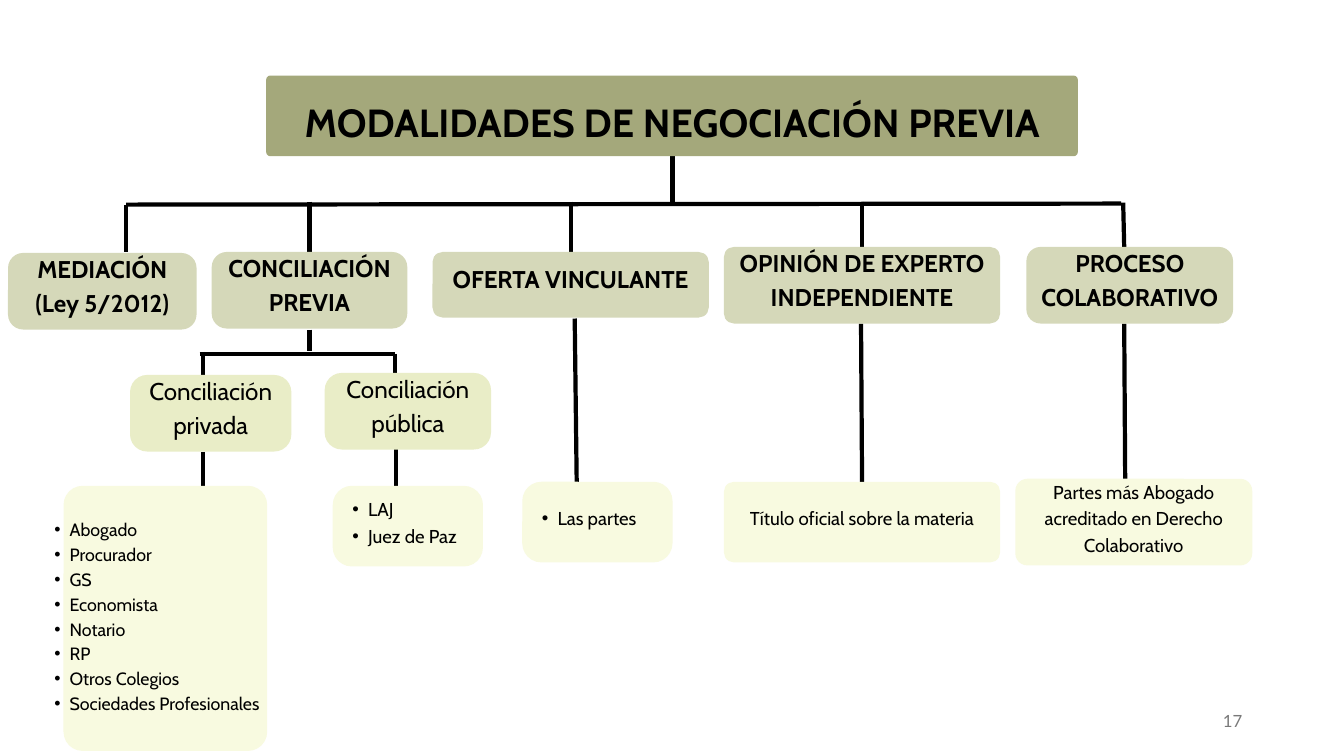
from dataclasses import dataclass

from lxml.etree import SubElement
from pptx import Presentation
from pptx.dml.color import RGBColor
from pptx.enum.shapes import MSO_CONNECTOR, MSO_SHAPE
from pptx.enum.text import MSO_ANCHOR, PP_ALIGN
from pptx.oxml.ns import qn
from pptx.util import Inches, Pt


@dataclass(frozen=True)
class Theme:
    """Colours, fonts and type sizes of the slide."""
    ink: str = "000000"
    muted: str = "797979"
    title_fill: str = "A4A87B"
    modality_fill: str = "D5D8B9"
    subtype_fill: str = "E9EDC7"
    detail_fill: str = "F8FAE0"
    font: str = "Cabin"
    number_font: str = "Lato"
    title_size: float = 28
    heading_size: float = 17.3
    detail_size: float = 13.3
    list_size: float = 12.7
    number_size: float = 12
    line_width: float = 3


@dataclass(frozen=True)
class Box:
    """A rectangle in inches."""
    left: float
    top: float
    width: float
    height: float

    def inside(self, left, top, width, height):
        """Return a box placed relative to this one."""
        return Box(self.left + left, self.top + top, width, height)

    def lengths(self):
        """Return the four values as lengths."""
        return [Inches(value) for value in (self.left, self.top, self.width, self.height)]


THEME = Theme()


def add_bullet(paragraph, indent):
    """Give a paragraph a round bullet with a hanging indent."""
    properties = paragraph._p.get_or_add_pPr()
    properties.set("marL", str(Inches(indent)))
    properties.set("indent", str(-Inches(indent / 2)))
    SubElement(properties, qn("a:buFont")).set("typeface", "Arial")
    SubElement(properties, qn("a:buChar")).set("char", "•")


def add_text(slide, box, text, *, size, spacing=None, bold=False, color=THEME.ink,
             font=THEME.font, align=PP_ALIGN.CENTER, indent=None, inset=0.04):
    """Write each line of text as a paragraph in a vertically centred box."""
    frame = slide.shapes.add_textbox(*box.lengths()).text_frame
    frame.word_wrap = True
    frame.vertical_anchor = MSO_ANCHOR.MIDDLE
    frame.margin_left = frame.margin_right = Inches(inset)
    frame.margin_top = frame.margin_bottom = Inches(inset)
    for index, line in enumerate(text.split("\n")):
        paragraph = frame.paragraphs[0] if index == 0 else frame.add_paragraph()
        paragraph.alignment = align
        if spacing:
            paragraph.line_spacing = Pt(spacing)
        if indent:
            add_bullet(paragraph, indent)
        run = paragraph.add_run()
        run.text = line
        run.font.name = font
        run.font.size = Pt(size)
        run.font.bold = bold
        run.font.color.rgb = RGBColor.from_string(color)


def add_panel(slide, box, fill, radius):
    """Draw a borderless rounded panel."""
    shape = slide.shapes.add_shape(MSO_SHAPE.ROUNDED_RECTANGLE, *box.lengths())
    shape.adjustments[0] = radius / min(box.width, box.height)
    shape.shadow.inherit = False
    shape.fill.solid()
    shape.fill.fore_color.rgb = RGBColor.from_string(fill)
    shape.line.fill.background()


def add_card(slide, box, text, *, fill, radius, rise, overhang=0, **text_format):
    """Draw a panel whose text box reaches above and left of it."""
    add_panel(slide, box, fill, radius)
    text_box = box.inside(-overhang, -rise, box.width + overhang, box.height + rise)
    add_text(slide, text_box, text, **text_format)


def draw_connectors(slide, box):
    """Draw the lines of the tree relative to the trunk's top left."""
    lines = [
        (5.42, 0, 5.42, 0.49), (0, 0.52, 9.87, 0.51),
        (0, 0.52, 0, 0.99), (9.89, 0.5, 9.9, 0.94),
        *[(x, 0.49, x, 0.99) for x in (1.82, 4.41, 7.3)],
        (1.82, 1.76, 1.82, 1.97), (0.73, 2, 2.67, 2),
        (0.76, 1.98, 0.76, 2.21), (2.67, 2, 2.67, 2.21),
        (0.76, 2.97, 0.76, 3.33), (2.68, 2.94, 2.68, 3.31),
        (4.45, 1.65, 4.47, 3.27), (7.29, 1.7, 7.3, 3.27), (9.9, 1.7, 9.91, 3.27),
    ]
    for x1, y1, x2, y2 in lines:
        connector = slide.shapes.add_connector(
            MSO_CONNECTOR.STRAIGHT,
            Inches(box.left + x1), Inches(box.top + y1),
            Inches(box.left + x2), Inches(box.top + y2))
        connector.line.width = Pt(THEME.line_width)
        connector.line.color.rgb = RGBColor.from_string(THEME.ink)
        SubElement(connector._element.spPr, qn("a:effectLst"))


def draw_title(slide, box):
    """Draw the title panel."""
    add_card(slide, box, "MODALIDADES DE NEGOCIACIÓN PREVIA", fill=THEME.title_fill,
             radius=0.04, rise=-0.18, size=THEME.title_size, spacing=29.1, bold=True)


def draw_modalities(slide, box):
    """Draw the row of five modalities."""
    cards = [
        ("MEDIACIÓN\n(Ley 5/2012)", 0, 0.06, 1.87, 0.76, 0.15),
        ("CONCILIACIÓN PREVIA", 2.02, 0.05, 1.94, 0.76, 0.15),
        ("OFERTA VINCULANTE", 4.21, 0.05, 2.74, 0.65, 0.1),
        ("OPINIÓN DE EXPERTO INDEPENDIENTE", 7.1, 0, 2.74, 0.76, 0.1),
        ("PROCESO COLABORATIVO", 10.1, 0, 2.05, 0.76, 0.14),
    ]
    for text, left, top, width, height, radius in cards:
        add_card(slide, box.inside(left, top, width, height), text,
                 fill=THEME.modality_fill, radius=radius, rise=0.16,
                 size=THEME.heading_size, spacing=24.3, bold=True)


def draw_subtypes(slide, box):
    """Draw the two kinds of conciliation."""
    cards = [("Conciliación privada", 0, 0.02, 1.6), ("Conciliación pública", 1.93, 0, 1.65)]
    for text, left, top, width in cards:
        add_card(slide, box.inside(left, top, width, box.height), text,
                 fill=THEME.subtype_fill, radius=0.17, rise=0.16,
                 size=THEME.heading_size, spacing=24.3)


def draw_details(slide, box):
    """Draw who takes part in each modality."""
    professionals = ("Abogado\nProcurador\nGS\nEconomista\nNotario\nRP\n"
                     "Otros Colegios\nSociedades Profesionales")
    add_card(slide, box.inside(0, 0.07, 2.02, 2.63), professionals,
             fill=THEME.detail_fill, radius=0.19, rise=0.07, overhang=0.28,
             size=THEME.list_size, spacing=17.7, align=PP_ALIGN.LEFT, indent=0.3)
    bulleted = {"align": PP_ALIGN.LEFT, "indent": 0.31}
    cards = [
        ("LAJ\nJuez de Paz", 2.67, 0.07, 1.49, 0.8, 0.19, bulleted),
        ("Las partes", 4.55, 0.03, 1.49, 0.8, 0.19, bulleted),
        ("Título oficial sobre la materia", 6.55, 0.03, 2.74, 0.8, 0.1, {}),
        ("Partes más Abogado acreditado en Derecho Colaborativo",
         9.44, 0, 2.35, 0.86, 0.12, {}),
    ]
    for text, left, top, width, height, radius, text_format in cards:
        add_card(slide, box.inside(left, top, width, height), text,
                 fill=THEME.detail_fill, radius=radius, rise=0.11,
                 size=THEME.detail_size, spacing=18.7, **text_format)


def draw_page_number(slide, box):
    """Write the page number."""
    add_text(slide, box, "17", size=THEME.number_size, color=THEME.muted,
             font=THEME.number_font, align=PP_ALIGN.RIGHT, inset=0.1)


def main():
    """Build and save the slide."""
    presentation = Presentation()
    presentation.slide_width = Inches(13.33)
    presentation.slide_height = Inches(7.5)
    slide = presentation.slides.add_slide(presentation.slide_layouts[6])
    draw_connectors(slide, Box(1.25, 1.51, 9.91, 3.33))
    draw_title(slide, Box(2.64, 0.75, 8.05, 0.8))
    draw_modalities(slide, Box(0.08, 2.45, 12.15, 0.82))
    draw_subtypes(slide, Box(1.29, 3.7, 3.58, 0.76))
    draw_details(slide, Box(0.63, 4.75, 11.79, 2.7))
    draw_page_number(slide, Box(9.42, 6.95, 3, 0.4))
    presentation.save("out.pptx")


if __name__ == "__main__":
    main()
